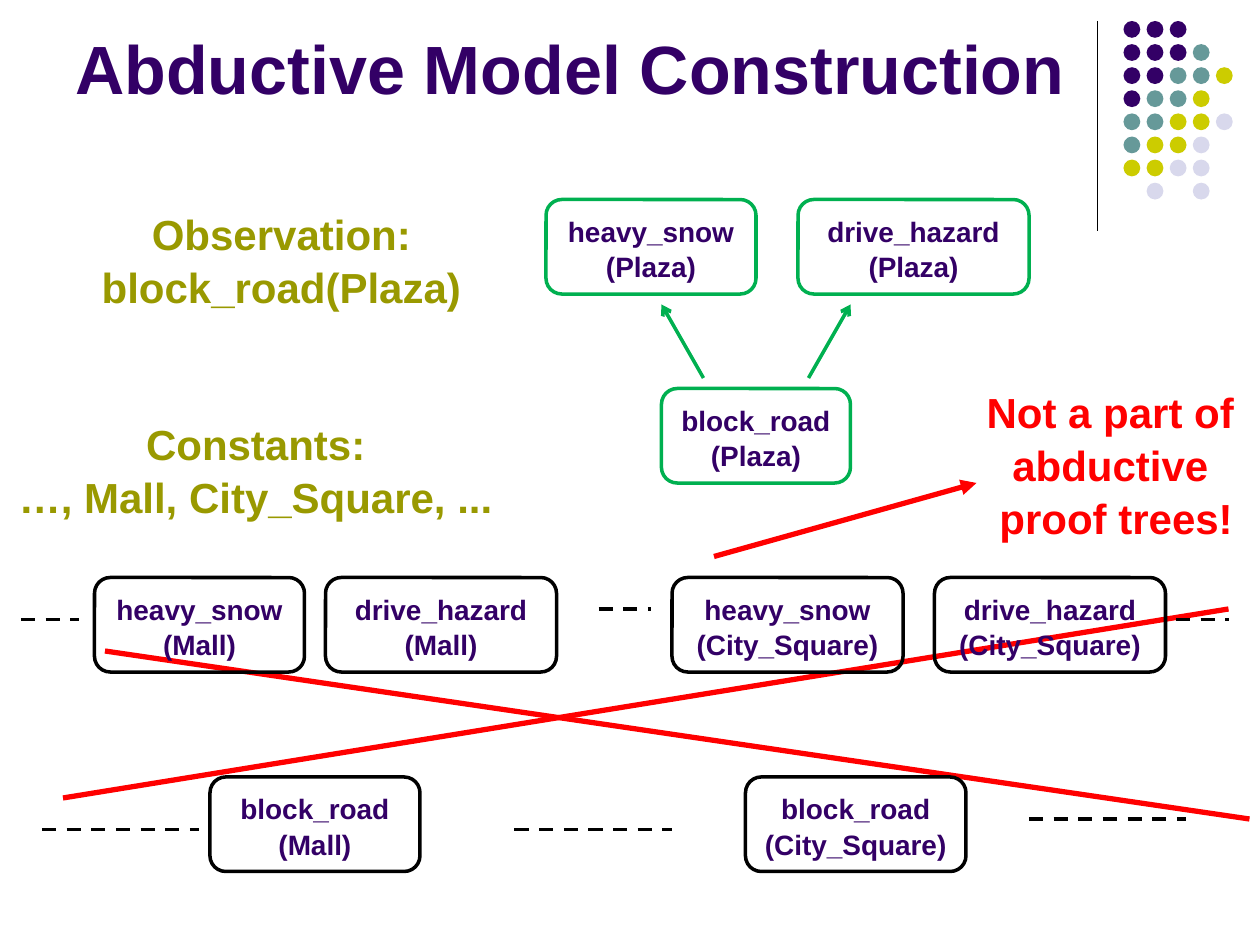
from dataclasses import dataclass
from typing import Optional

import lxml.etree
import pptx
import pptx.dml.color
import pptx.enum.dml
import pptx.enum.shapes
import pptx.enum.text
import pptx.oxml.ns
import pptx.util

COLOURS = {
    "purple": "330066",
    "teal": "669999",
    "lime": "CCCC00",
    "lavender": "D8D8EC",
    "olive": "999900",
    "red": "FF0000",
    "green": "00B050",
    "black": "000000",
}
COLUMNS, ROWS = 120, 90
DOT_COLOURS = {"P": "purple", "T": "teal", "L": "lime", "V": "lavender"}
DOT_ROWS = ("PPP", "PPPT", "PPTTL", "PTTL", "TTLLV", "TLLV", "LLVV", " V V")
DOT_LEFT, DOT_TOP, DOT_PITCH, DOT_SIZE = 107, 2, 2.2, 1.6
NODE_HEIGHT = 9
ALIGN = pptx.enum.text.PP_ALIGN
ANCHOR = pptx.enum.text.MSO_ANCHOR
SHAPE = pptx.enum.shapes.MSO_SHAPE

deck = pptx.Presentation()
deck.slide_width = pptx.util.Inches(10)
deck.slide_height = pptx.util.Inches(7.5)
page = deck.slides.add_slide(deck.slide_layouts[6])


@dataclass
class Node:
    column: float
    row: float
    width: float
    predicate: str
    constant: str
    colour: str = "black"


@dataclass
class Stroke:
    start: tuple[float, float]
    end: tuple[float, float]
    colour: str = "black"
    weight: float = 2
    head: Optional[str] = None
    dashed: bool = False


@dataclass
class Label:
    column: float
    row: float
    width: float
    height: float
    text: str
    colour: str


def across(columns: float) -> int:
    return round(deck.slide_width * columns / COLUMNS)


def down(rows: float) -> int:
    return round(deck.slide_height * rows / ROWS)


def colour_of(name: str) -> pptx.dml.color.RGBColor:
    return pptx.dml.color.RGBColor.from_string(COLOURS[name])


def write(frame, text: str, *, size: float, colour: str, align=ALIGN.CENTER,
          anchor=ANCHOR.TOP, wrap: bool = True, spacing: float = 1.05) -> None:
    frame.word_wrap = wrap
    frame.vertical_anchor = anchor
    for index, line in enumerate(text.split("\n")):
        para = frame.paragraphs[0] if index == 0 else frame.add_paragraph()
        para.alignment = align
        para.line_spacing = spacing
        span = para.add_run()
        span.text = line
        span.font.name = "Arial"
        span.font.size = pptx.util.Pt(size)
        span.font.bold = True
        span.font.color.rgb = colour_of(colour)


def draw_dot(column: float, row: float, colour: str) -> None:
    dot = page.shapes.add_shape(SHAPE.OVAL, across(column), down(row),
                                across(DOT_SIZE), down(DOT_SIZE))
    dot.shadow.inherit = False
    dot.fill.solid()
    dot.fill.fore_color.rgb = colour_of(colour)
    dot.line.fill.background()


def draw_node(node: Node) -> None:
    box = page.shapes.add_shape(SHAPE.ROUNDED_RECTANGLE, across(node.column), down(node.row),
                                across(node.width), down(NODE_HEIGHT))
    box.shadow.inherit = False
    box.fill.background()
    box.line.color.rgb = colour_of(node.colour)
    box.line.width = pptx.util.Pt(2)
    write(box.text_frame, f"{node.predicate}\n({node.constant})",
          size=16, colour="purple", anchor=ANCHOR.BOTTOM, wrap=False)


def draw_stroke(stroke: Stroke) -> None:
    line = page.shapes.add_connector(
        pptx.enum.shapes.MSO_CONNECTOR.STRAIGHT,
        across(stroke.start[0]), down(stroke.start[1]),
        across(stroke.end[0]), down(stroke.end[1]))
    line.line.color.rgb = colour_of(stroke.colour)
    line.line.width = pptx.util.Pt(stroke.weight)
    if stroke.dashed:
        line.line.dash_style = pptx.enum.dml.MSO_LINE.DASH
    properties = line.element.spPr
    if stroke.head:
        outline = properties.find(pptx.oxml.ns.qn("a:ln"))
        lxml.etree.SubElement(outline, pptx.oxml.ns.qn("a:tailEnd"), type=stroke.head)
    lxml.etree.SubElement(properties, pptx.oxml.ns.qn("a:effectLst"))


def draw_label(label: Label) -> None:
    box = page.shapes.add_textbox(across(label.column), down(label.row),
                                  across(label.width), down(label.height))
    write(box.text_frame, label.text, size=24, colour=label.colour, wrap=False)


LABELS = (
    Label(0.4, 39, 47.9, 10.9, "Constants:\n…, Mall, City_Square, ...", "olive"),
    Label(92.6, 36, 27.4, 15.7, "Not a part of \nabductive \nproof trees!", "red"),
    Label(8.3, 19, 37, 10.9, "Observation:\nblock_road(Plaza)", "olive"),
)
STROKES = (
    Stroke((68, 53), (93, 46), "red", 3, "triangle"),
    Stroke((6, 76), (117, 58), "red", 3),
    Stroke((119, 78), (10, 62), "red", 3),
    Stroke((77, 36), (81, 29), "green", head="arrow"),
    Stroke((67, 36), (63, 29), "green", head="arrow"),
    Stroke((98, 78), (113, 78), dashed=True),
    Stroke((49, 79), (64, 79), dashed=True),
    Stroke((4, 79), (19, 79), dashed=True),
    Stroke((57, 58), (62, 58), dashed=True),
    Stroke((2, 59), (7.5, 59), dashed=True),
    Stroke((112, 59), (117, 59), dashed=True),
)
NODES = (
    Node(63, 37, 18, "block_road", "Plaza", "green"),
    Node(52, 19, 20, "heavy_snow", "Plaza", "green"),
    Node(76, 19, 22, "drive_hazard", "Plaza", "green"),
    Node(20, 74, 20, "block_road", "Mall"),
    Node(9, 55, 20, "heavy_snow", "Mall"),
    Node(31, 55, 22, "drive_hazard", "Mall"),
    Node(71, 74, 21, "block_road", "City_Square"),
    Node(89, 55, 22, "drive_hazard", "City_Square"),
    Node(64, 55, 22, "heavy_snow", "City_Square"),
)

draw_stroke(Stroke((104.5, 2), (104.5, 22), weight=0.75))
for row, pattern in enumerate(DOT_ROWS):
    for column, code in enumerate(pattern):
        if code in DOT_COLOURS:
            draw_dot(DOT_LEFT + column * DOT_PITCH, DOT_TOP + row * DOT_PITCH, DOT_COLOURS[code])

title = page.shapes.add_textbox(across(6), down(1.5), across(99), down(9.4))
write(title.text_frame, "Abductive Model Construction", size=39, colour="purple",
      align=ALIGN.LEFT, anchor=ANCHOR.BOTTOM, spacing=1.0)
for label in LABELS:
    draw_label(label)
for stroke in STROKES:
    draw_stroke(stroke)
for node in NODES:
    draw_node(node)

deck.save("out.pptx")
